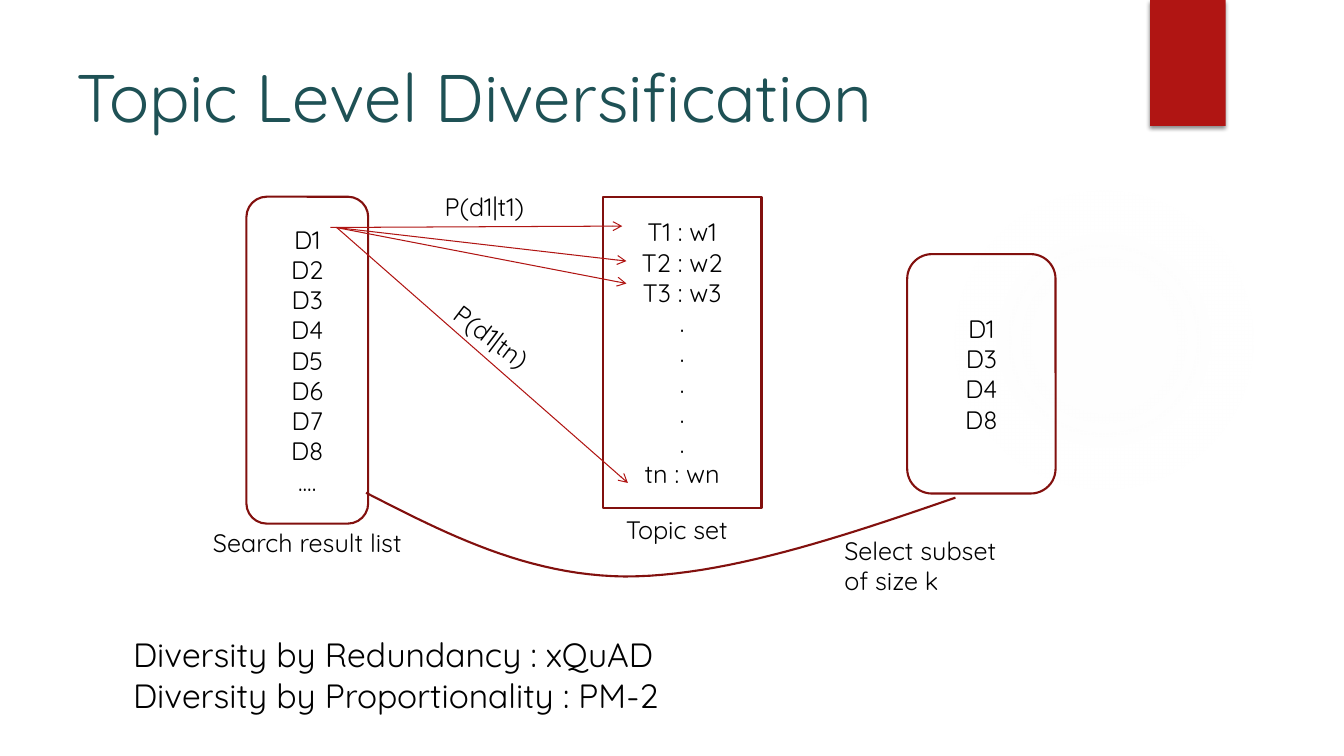
from lxml import etree
from pptx import Presentation
from pptx.dml.color import RGBColor
from pptx.enum import shapes, text
from pptx.oxml import parse_xml
from pptx.oxml.ns import qn
from pptx.util import Pt

RED = RGBColor(0xB0, 0x15, 0x13)
DARK = RGBColor(0x82, 0x10, 0x0E)
TEAL = RGBColor(0x1E, 0x51, 0x55)
BLACK = RGBColor(0, 0, 0)
NS = 'xmlns:a="http://schemas.openxmlformats.org/drawingml/2006/main"'
KIND = shapes.MSO_SHAPE
ALIGN = text.PP_ALIGN
TOP, MIDDLE = text.MSO_ANCHOR.TOP, text.MSO_ANCHOR.MIDDLE

prs = Presentation()
prs.slide_width, prs.slide_height = Pt(960), Pt(540)
slide = prs.slides.add_slide(prs.slide_layouts[5])
items = slide.shapes


def write(shape, lines, size=18, color=BLACK, align=ALIGN.LEFT, anchor=TOP):
    frame = shape.text_frame
    frame.text = "\n".join(lines)
    form = {"word_wrap": True, "vertical_anchor": anchor,
            "auto_size": text.MSO_AUTO_SIZE.NONE,
            "margin_left": Pt(7.2), "margin_right": Pt(7.2),
            "margin_top": Pt(3.6), "margin_bottom": Pt(3.6)}
    for key, value in form.items():
        setattr(frame, key, value)
    for para in frame.paragraphs:
        para.alignment = align
        para.font.name, para.font.size = "Quicksand", Pt(size)
        para.font.color.rgb = color


def outline(shape):
    shape.shadow.inherit = False
    shape.fill.background()
    shape.line.color.rgb, shape.line.width = DARK, Pt(1.5)


# Title
title = items.title
title.left, title.top, title.width, title.height = Pt(47.5), Pt(36), Pt(741), Pt(79)
write(title, ["Topic Level Diversification"], 48, TEAL)

# Faint glow and red tab
glow = items.add_shape(KIND.OVAL, Pt(677.5), Pt(131.8), Pt(221.8), Pt(221.8))
glow.shadow.inherit = False
glow.line.fill.background()
stops = "".join(
    f'<a:gs pos="{pos}000"><a:srgbClr val="F3F3F3"><a:alpha val="{alpha}000"/>'
    f'</a:srgbClr></a:gs>' for pos, alpha in [(0, 7), (36, 6), (69, 0)])
glow.fill.background()
props = glow.element.spPr
props.replace(props.find(qn("a:noFill")), parse_xml(
    f'<a:gradFill {NS}><a:gsLst>{stops}</a:gsLst><a:path path="circle">'
    '<a:fillToRect l="50000" t="50000" r="50000" b="50000"/></a:path></a:gradFill>'))

tab = items.add_shape(KIND.RECTANGLE, Pt(821.5), 0, Pt(54), Pt(90))
tab.shadow.inherit = False
tab.fill.solid()
tab.fill.fore_color.rgb = RED
tab.line.fill.background()
tab.element.spPr.find(qn("a:effectLst")).append(parse_xml(
    f'<a:outerShdw {NS} blurRad="38100" dist="25400" dir="5400000" rotWithShape="0">'
    '<a:srgbClr val="000000"><a:alpha val="45000"/></a:srgbClr></a:outerShdw>'))

# Result list, topic set and chosen subset
results = [f"D{n}" for n in range(1, 9)] + ["...."]
topics = [f"T{n} : w{n}" for n in range(1, 4)] + ["."] * 5 + ["tn : wn"]
subset = ["D1", "D3", "D4", "D8"]
for kind, x, y, w, h, lines in [
        (KIND.ROUNDED_RECTANGLE, 176, 140.5, 87, 233.5, results),
        (KIND.RECTANGLE, 430.5, 141, 113.5, 222, topics),
        (KIND.ROUNDED_RECTANGLE, 648, 181.5, 106, 171, subset)]:
    box = items.add_shape(kind, Pt(x), Pt(y), Pt(w), Pt(h))
    outline(box)
    write(box, lines, align=ALIGN.CENTER, anchor=MIDDLE)

# Arrows from the first document to the topics
for x1, x2, y2 in [(236, 444.5, 161.5), (240, 447.5, 186.5),
                   (240, 447.5, 202.5), (240.5, 448.5, 345)]:
    arrow = items.add_connector(shapes.MSO_CONNECTOR.STRAIGHT,
                                Pt(x1), Pt(162.5), Pt(x2), Pt(y2))
    arrow.line.color.rgb, arrow.line.width = RED, Pt(0.75)
    etree.SubElement(arrow.line._get_or_add_ln(), qn("a:tailEnd"), type="arrow")
    etree.SubElement(arrow.element.spPr, qn("a:effectLst"))

# Curve from the result list to the subset
curves = [[(261.5, 352), (319, 381.5), (376.5, 411), (446.5, 411.8)],
          [(446.5, 411.8), (517, 411.8), (600, 384), (682.5, 355.5)]]
steps = 24
dots = []
for curve in curves:
    for step in range(1, steps + 1):
        t = step / steps
        mix = [(1 - t) ** 3, 3 * t * (1 - t) ** 2, 3 * t * t * (1 - t), t ** 3]
        dots.append([Pt(sum(m * p[axis] for m, p in zip(mix, curve)))
                     for axis in (0, 1)])
first = curves[0][0]
build = items.build_freeform(Pt(first[0]), Pt(first[1]))
build.add_line_segments(dots, close=False)
outline(build.convert_to_shape())

# Labels and closing notes
for x, y, w, h, size, turn, lines in [
        (145, 373, 155.5, 30, 18, 0, ["Search result list"]),
        (440, 363.5, 103.5, 30, 18, 0, ["Topic set"]),
        (310.5, 133, 111.5, 30, 18, 0, ["P(d1|t1)"]),
        (309.5, 237, 111.5, 30, 18, 37.1, ["P(d1|tn)"]),
        (596, 379, 142.5, 53, 18, 0, ["Select subset of size k"]),
        (88, 449.5, 466.5, 65.5, 24, 0, ["Diversity by Redundancy : xQuAD",
                                         "Diversity by Proportionality : PM-2"])]:
    label = items.add_textbox(Pt(x), Pt(y), Pt(w), Pt(h))
    label.rotation = turn
    write(label, lines, size)

prs.save("out.pptx")
